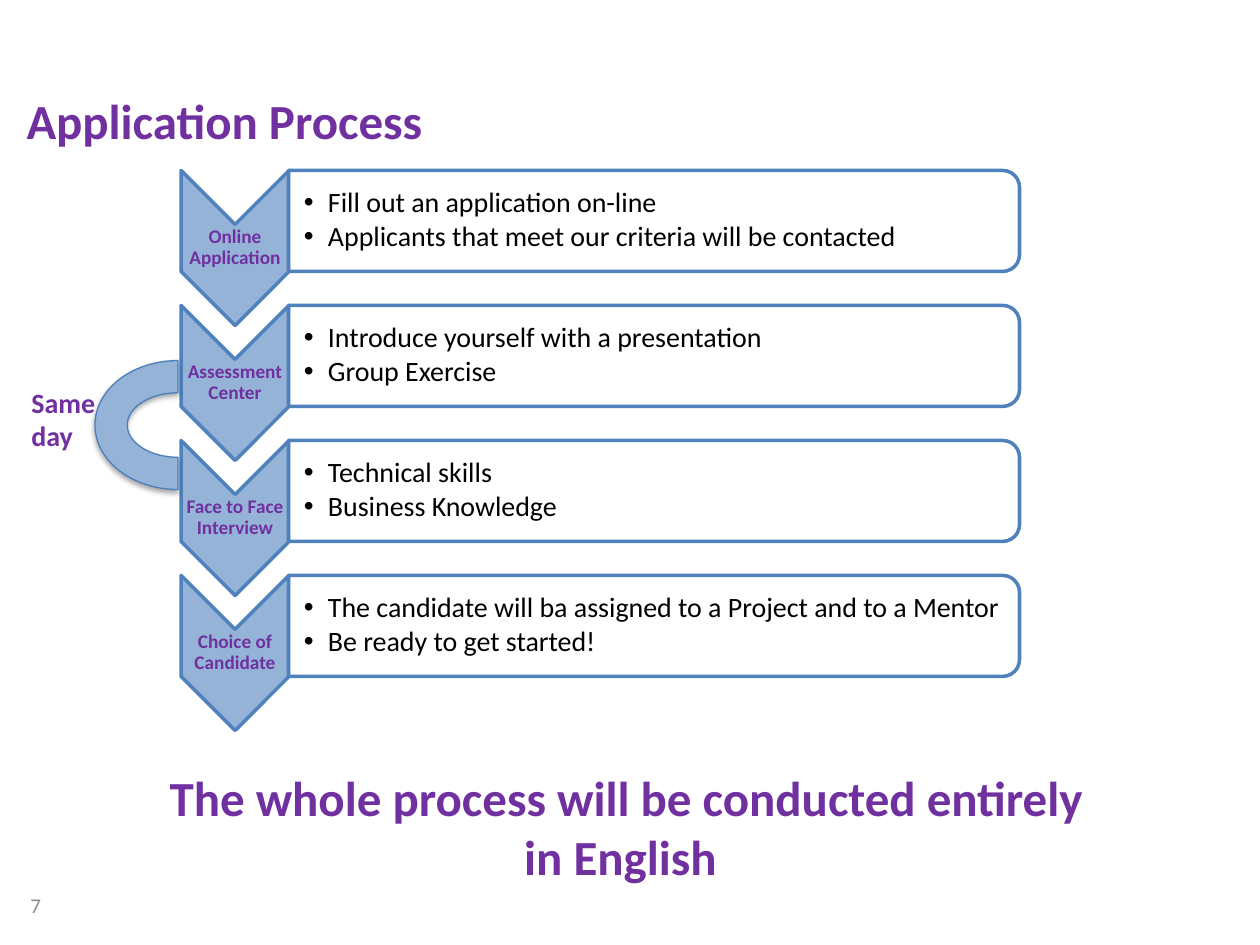
from lxml.etree import SubElement
from pptx import Presentation
from pptx.dml.color import RGBColor
from pptx.enum.shapes import MSO_SHAPE
from pptx.enum.text import MSO_ANCHOR, MSO_AUTO_SIZE, PP_ALIGN
from pptx.oxml.ns import qn
from pptx.util import Emu, Pt

# Content
TITLE = "Application Process"
STEPS = [
    ("Online Application",
     ["Fill out an application on-line",
      "Applicants that meet our criteria will be contacted"]),
    ("Assessment Center",
     ["Introduce yourself with a presentation", "Group Exercise"]),
    ("Face to Face Interview",
     ["Technical skills", "Business Knowledge"]),
    ("Choice of Candidate",
     ["The candidate will ba assigned to a Project and to a Mentor",
      "Be ready to get started!"]),
]
SAME_DAY = ["Same", "day"]
CLOSING = "The whole process will be conducted entirely in English "
PAGE = "7"

THEME = {
    "font": "Calibri",
    "purple": "7030A0", "black": "000000", "grey": "8C8C8C", "white": "FFFFFF",
    "light_blue": "95B3D7", "blue": "4F81BD", "arc_line": "4B7EBC",
    "heading": 28, "body": 16, "label": 11, "page": 12,
}

# Layout in px
PX_PER_INCH = 126
STEP_PITCH = 135
CHEVRON_CENTER = (235, 248)
CHEVRON_SIZE = (155, 108)
LABEL_SIZE = (108, 47)
PANEL_CENTER = (654, 221)
PANEL_SIZE = (101, 731)
BULLETS_BOX = (289, 175, 726, 91)
ARC_CENTER = (178, 425)
ARC_SIZE = (129, 166)
BULLET_INDENT = 24


def px(value):
    return Emu(round(value * 914400 / PX_PER_INCH))


def color(name):
    return RGBColor.from_string(THEME[name])


def centered(center, size):
    (x, y), (width, height) = center, size
    return x - width / 2, y - height / 2, width, height


def write(frame, lines, size, ink, bold=False, insets=None,
          anchor=MSO_ANCHOR.TOP, bullets=False, **paragraph_format):
    frame_format = {"word_wrap": True, "auto_size": MSO_AUTO_SIZE.NONE,
                    "vertical_anchor": anchor}
    if insets:
        sides = ("margin_left", "margin_top", "margin_right", "margin_bottom")
        frame_format.update(zip(sides, map(px, insets)))
    for key, value in frame_format.items():
        setattr(frame, key, value)
    for index, line in enumerate(lines):
        paragraph = frame.paragraphs[0] if index == 0 else frame.add_paragraph()
        paragraph.text = line
        for key, value in paragraph_format.items():
            setattr(paragraph, key, value)
        if bullets:
            properties = paragraph._p.get_or_add_pPr()
            properties.set("marL", str(px(BULLET_INDENT)))
            properties.set("indent", str(-px(BULLET_INDENT)))
            SubElement(properties, qn("a:buFont"), typeface="Arial")
            SubElement(properties, qn("a:buChar"), char="•")
        font = paragraph.runs[0].font
        font_format = {"name": THEME["font"], "size": Pt(THEME[size]), "bold": bold}
        for key, value in font_format.items():
            setattr(font, key, value)
        font.color.rgb = color(ink)


def add_text(slide, box, *args, **options):
    write(slide.shapes.add_textbox(*map(px, box)).text_frame, *args, **options)


def add_rotated(slide, preset, center, size, rotation, fill, line, width):
    shape = slide.shapes.add_shape(preset, *map(px, centered(center, size)))
    shape.shadow.inherit = False
    shape.rotation = rotation
    shape.fill.solid()
    shape.fill.fore_color.rgb = color(fill)
    shape.line.color.rgb = color(line)
    shape.line.width = Pt(width)
    return shape


def add_step(slide, index, label, points):
    drop = index * STEP_PITCH
    chevron_center = (CHEVRON_CENTER[0], CHEVRON_CENTER[1] + drop)
    panel_center = (PANEL_CENTER[0], PANEL_CENTER[1] + drop)
    left, top, width, height = BULLETS_BOX

    add_rotated(slide, MSO_SHAPE.CHEVRON, chevron_center, CHEVRON_SIZE, 90,
                "light_blue", "blue", 2)
    add_text(slide, centered(chevron_center, LABEL_SIZE), [label], "label",
             "purple", bold=True, insets=(1, 1, 1, 1), anchor=MSO_ANCHOR.MIDDLE,
             alignment=PP_ALIGN.CENTER, line_spacing=0.9)

    panel = add_rotated(slide, MSO_SHAPE.ROUND_2_SAME_RECTANGLE, panel_center,
                        PANEL_SIZE, 90, "white", "blue", 2)
    panel_color = panel.fill._xPr.find(qn("a:solidFill"))[0]
    SubElement(panel_color, qn("a:alpha"), val="90000")
    add_text(slide, (left, top + drop, width, height), points, "body", "black",
             insets=(15, 1, 1, 1), anchor=MSO_ANCHOR.MIDDLE, bullets=True,
             line_spacing=0.9, space_after=Pt(2.4))


def add_same_day_arc(slide):
    arc = add_rotated(slide, MSO_SHAPE.BLOCK_ARC, ARC_CENTER, ARC_SIZE, 270,
                      "light_blue", "arc_line", 0.75)
    effects = arc._element.spPr.find(qn("a:effectLst"))
    shadow = SubElement(effects, qn("a:outerShdw"), blurRad=str(Pt(3.1)),
                        dist=str(Pt(1.8)), dir="5400000", rotWithShape="0")
    shade = SubElement(shadow, qn("a:srgbClr"), val=THEME["black"])
    SubElement(shade, qn("a:alpha"), val="35000")


def main():
    deck = Presentation()
    deck.slide_width, deck.slide_height = px(1260), px(945)
    slide = deck.slides.add_slide(deck.slide_layouts[5])

    # Title and page number
    title = slide.shapes.title
    title_box = dict(zip(("left", "top", "width", "height"), (14, 84, 1075, 72)))
    for key, value in title_box.items():
        setattr(title, key, px(value))
    write(title.text_frame, [TITLE], "heading", "purple", bold=True,
          alignment=PP_ALIGN.LEFT)
    add_text(slide, (18, 880, 66, 50), [PAGE], "page", "grey",
             anchor=MSO_ANCHOR.MIDDLE)

    # Process steps
    for index, (label, points) in enumerate(STEPS):
        add_step(slide, index, label, points)

    # Closing line and same-day link
    add_text(slide, (147, 761, 958, 131), [CLOSING], "heading", "purple",
             bold=True, alignment=PP_ALIGN.CENTER)
    add_same_day_arc(slide)
    add_text(slide, (19, 379, 147, 81), SAME_DAY, "body", "purple", bold=True)

    deck.save("out.pptx")


if __name__ == "__main__":
    main()
